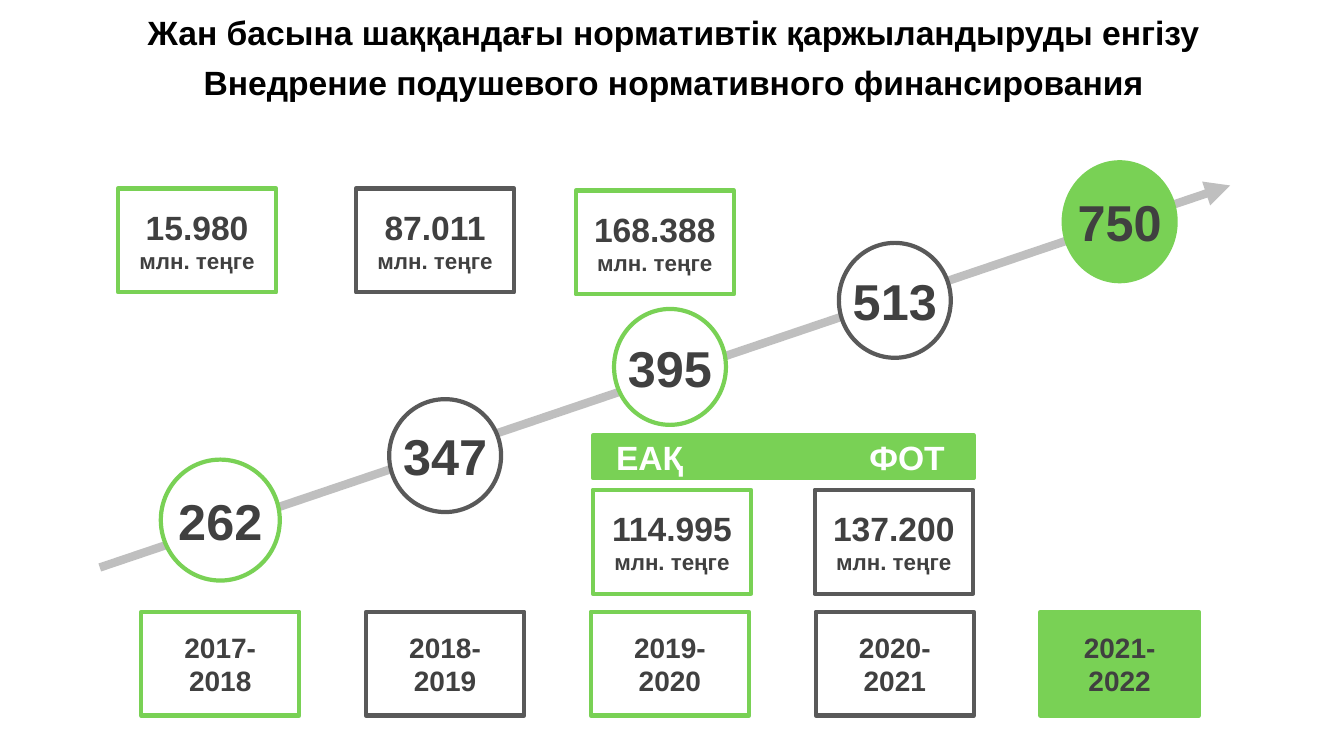
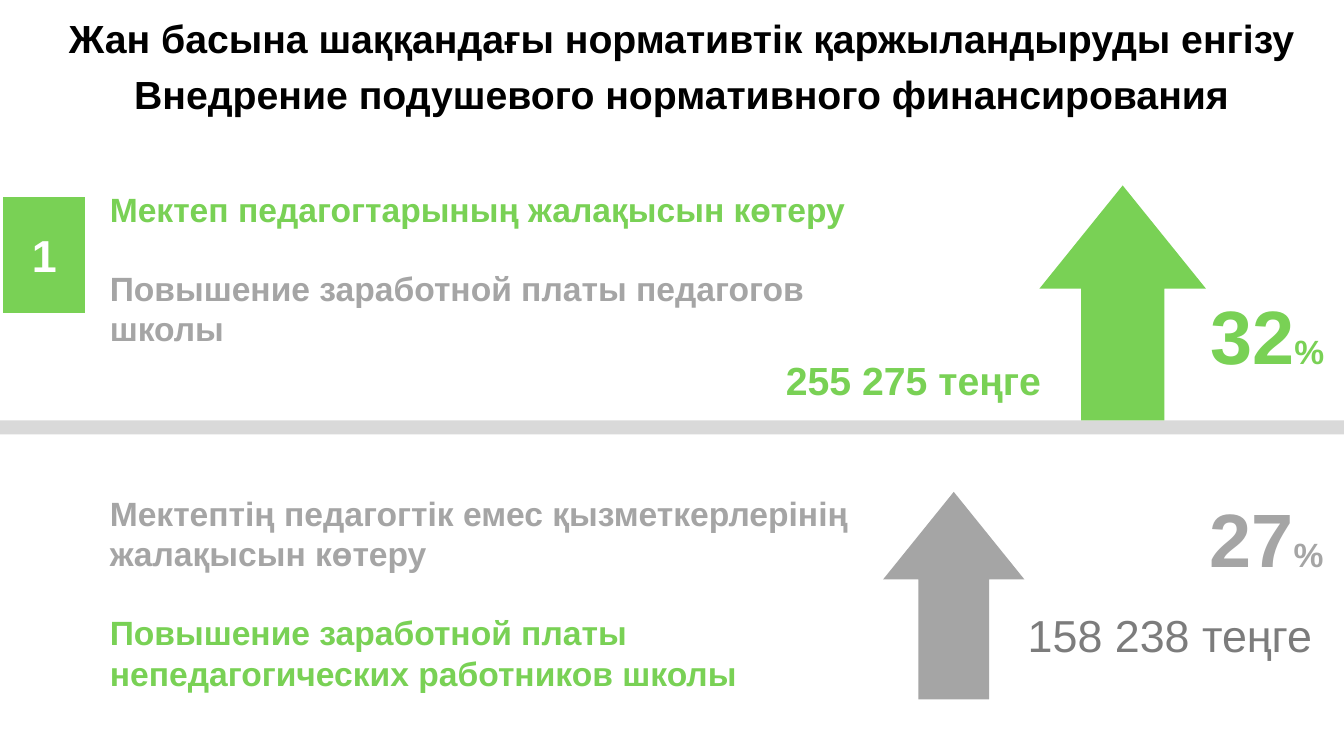
from dataclasses import dataclass

from lxml.etree import SubElement
from pptx import Presentation
from pptx.dml.color import RGBColor
from pptx.enum.shapes import MSO_CONNECTOR as LINE, MSO_SHAPE as SHAPE
from pptx.enum.text import MSO_ANCHOR as ANCHOR, PP_ALIGN as ALIGN
from pptx.oxml.ns import qn
from pptx.util import Inches, Pt

WIDTH, HEIGHT = 13.33, 7.5
FONT = "Arial"
GREEN, DARK, INK, WHITE = "79D155", "595959", "404040", "FFFFFF"
GRAY, RULE, ARROW, SUM = "A5A5A5", "D9D9D9", "BFBFBF", "7C7C7C"
TITLE = (
    "Жан басына шаққандағы нормативтік қаржыландыруды енгізу",
    "Внедрение подушевого нормативного финансирования",
)
COL_FIRST, COL_STEP = 2.185, 2.23
BOX_W, BOX_H = 1.57, 1.03
YEARS_Y = 6.07


@dataclass(frozen=True)
class Run:
    text: str
    size: float
    color: str = INK
    bold: bool = True


@dataclass(frozen=True)
class Year:
    label: str
    schools: str
    color: str
    center_y: float
    width: float
    height: float
    fill: str = WHITE


@dataclass(frozen=True)
class Amount:
    value: str
    color: str
    left: float
    top: float


@dataclass(frozen=True)
class Raise:
    color: str
    arrow: tuple[float, float, float, float]
    percent: str
    percent_at: tuple[float, float]
    sum_run: Run
    sum_at: tuple[float, float, float, float]
    text_top: float
    text_width: float
    text_height: float
    kazakh: Run
    russian: Run


YEARS = (
    Year("2017-2018", "262", GREEN, 5.16, 1.18, 1.2),
    Year("2018-2019", "347", DARK, 4.52, 1.11, 1.12),
    Year("2019-2020", "395", GREEN, 3.64, 1.11, 1.15),
    Year("2020-2021", "513", DARK, 2.98, 1.11, 1.14),
    Year("2021-2022", "750", GREEN, 2.2, 1.11, 1.18, GREEN),
)
AMOUNTS = (
    Amount("15.980", GREEN, 1.17, 1.87),
    Amount("87.011", DARK, 3.53, 1.87),
    Amount("168.388", GREEN, 5.71, 1.89),
    Amount("114.995", GREEN, 5.88, 4.86),
    Amount("137.200", DARK, 8.08, 4.86),
)
RAISES = (
    Raise(
        GREEN, (10.31, 1.84, 1.65, 2.33), "32", (11.86, 2.82),
        Run("255 275 теңге", 28, GREEN), (7.51, 3.48, 3.1, 0.57),
        1.82, 7.78, 1.72,
        Run("Мектеп педагогтарының жалақысын көтеру", 24, GREEN),
        Run("Повышение заработной платы педагогов школы", 24, GRAY),
    ),
    Raise(
        GRAY, (8.76, 4.88, 1.4, 2.06), "27", (11.85, 4.83),
        Run("158 238 теңге", 32, SUM, False), (10.03, 5.98, 3.15, 0.64),
        4.84, 7.69, 2.12,
        Run("Мектептің педагогтік емес қызметкерлерінің жалақысын көтеру", 24, GRAY),
        Run("Повышение заработной платы непедагогических работников школы", 24, GREEN),
    ),
)


def rgb(value: str) -> RGBColor:
    return RGBColor.from_string(value)


def column(i: int) -> float:
    return COL_FIRST + i * COL_STEP


def write(sp, *lines: tuple[Run, ...], align=ALIGN.CENTER, anchor=ANCHOR.MIDDLE,
          inset: float = 0.1, top: float = 0.05, wrap: bool = True, gap: float = 0,
          spacing: float = 1.0, tab: float = 0):
    tf = sp.text_frame
    tf.word_wrap = wrap
    tf.vertical_anchor = anchor
    tf.margin_left = tf.margin_right = Inches(inset)
    tf.margin_top, tf.margin_bottom = Inches(top), Inches(0.05)
    for i, runs in enumerate(lines):
        p = tf.add_paragraph() if i else tf.paragraphs[0]
        p.alignment, p.line_spacing = align, spacing
        if i and gap:
            p.space_before = Pt(gap)
        if tab:
            tabs = SubElement(p._p.get_or_add_pPr(), qn("a:tabLst"))
            SubElement(tabs, qn("a:tab"), pos=str(Inches(tab)), algn="r")
        for run in runs:
            r = p.add_run()
            r.text = run.text
            r.font.name, r.font.size, r.font.bold = FONT, Pt(run.size), run.bold
            r.font.color.rgb = rgb(run.color)


def add_shape(s, kind, x: float, y: float, w: float, h: float, fill: str,
              line: str = "", weight: float = 3):
    sp = s.shapes.add_shape(kind, Inches(x), Inches(y), Inches(w), Inches(h))
    sp.shadow.inherit = False
    sp.fill.solid()
    sp.fill.fore_color.rgb = rgb(fill)
    if line:
        sp.line.color.rgb = rgb(line)
        sp.line.width = Pt(weight)
    else:
        sp.line.fill.background()
    return sp


def add_text(s, x: float, y: float, w: float, h: float, *lines: tuple[Run, ...], **fmt):
    sp = s.shapes.add_textbox(Inches(x), Inches(y), Inches(w), Inches(h))
    write(sp, *lines, **fmt)


def add_title(s, y: float, w: float, h: float, size: float):
    add_text(s, 0.35, y, w, h, *((Run(t, size, "000000"),) for t in TITLE),
             top=0.1, gap=10, spacing=0.9)


def add_trend(s):
    cn = s.shapes.add_connector(LINE.STRAIGHT, Inches(0.99), Inches(5.63),
                                Inches(12.2), Inches(1.84))
    cn.line.color.rgb = rgb(ARROW)
    cn.line.width = Pt(6)
    SubElement(cn.line._get_or_add_ln(), qn("a:tailEnd"), type="triangle")
    SubElement(cn._element.spPr, qn("a:effectLst"))


def add_year(s, i: int, year: Year):
    center = column(i)
    sp = add_shape(s, SHAPE.OVAL, center - year.width / 2, year.center_y - year.height / 2,
                   year.width, year.height, year.fill, year.color)
    write(sp, (Run(year.schools, 36),), inset=0, wrap=False)
    sp = add_shape(s, SHAPE.RECTANGLE, center - BOX_W / 2, YEARS_Y,
                   BOX_W, BOX_H, year.fill, year.color)
    write(sp, (Run(year.label, 20),), inset=0.16)


def add_amount(s, amount: Amount):
    sp = add_shape(s, SHAPE.RECTANGLE, amount.left, amount.top,
                   BOX_W, BOX_H, WHITE, amount.color)
    write(sp, (Run(amount.value, 24),), (Run("млн. теңге", 16),))


def add_raise(s, item: Raise):
    sp = add_shape(s, SHAPE.UP_ARROW, *item.arrow, item.color)
    sp.adjustments[0], sp.adjustments[1] = 0.5, 0.62
    add_text(s, *item.sum_at, (item.sum_run,))
    add_text(s, 0.99, item.text_top, item.text_width, item.text_height,
             (item.kazakh,), (item.russian,),
             align=ALIGN.LEFT, anchor=ANCHOR.TOP, gap=27.6)
    add_text(s, *item.percent_at, 1.42, 1.01,
             (Run(item.percent, 54, item.color), Run("%", 24, item.color)),
             anchor=ANCHOR.TOP)


def build_growth(s):
    add_title(s, 0, 12.66, 1.13, 24)
    add_trend(s)
    for i, year in enumerate(YEARS):
        add_year(s, i, year)
    for amount in AMOUNTS:
        add_amount(s, amount)
    sp = add_shape(s, SHAPE.RECTANGLE, 5.88, 4.32, 3.78, 0.42, GREEN, GREEN)
    write(sp, (Run("ЕАҚ\tФОТ", 24, WHITE),), align=ALIGN.LEFT, inset=0.23, tab=3.26)


def build_raises(s):
    add_title(s, 0.03, 12.82, 1.25, 28)
    add_shape(s, SHAPE.RECTANGLE, 0, 4.17, WIDTH, 0.14, RULE)
    for item in RAISES:
        add_raise(s, item)
    sp = add_shape(s, SHAPE.RECTANGLE, 0.02, 1.94, 0.84, 1.18, GREEN, WHITE, 2)
    write(sp, (Run("1", 32, WHITE),))


def main():
    prs = Presentation()
    prs.slide_width, prs.slide_height = Inches(WIDTH), Inches(HEIGHT)
    for build in (build_growth, build_raises):
        build(prs.slides.add_slide(prs.slide_layouts[6]))
    prs.save("out.pptx")


if __name__ == "__main__":
    main()
